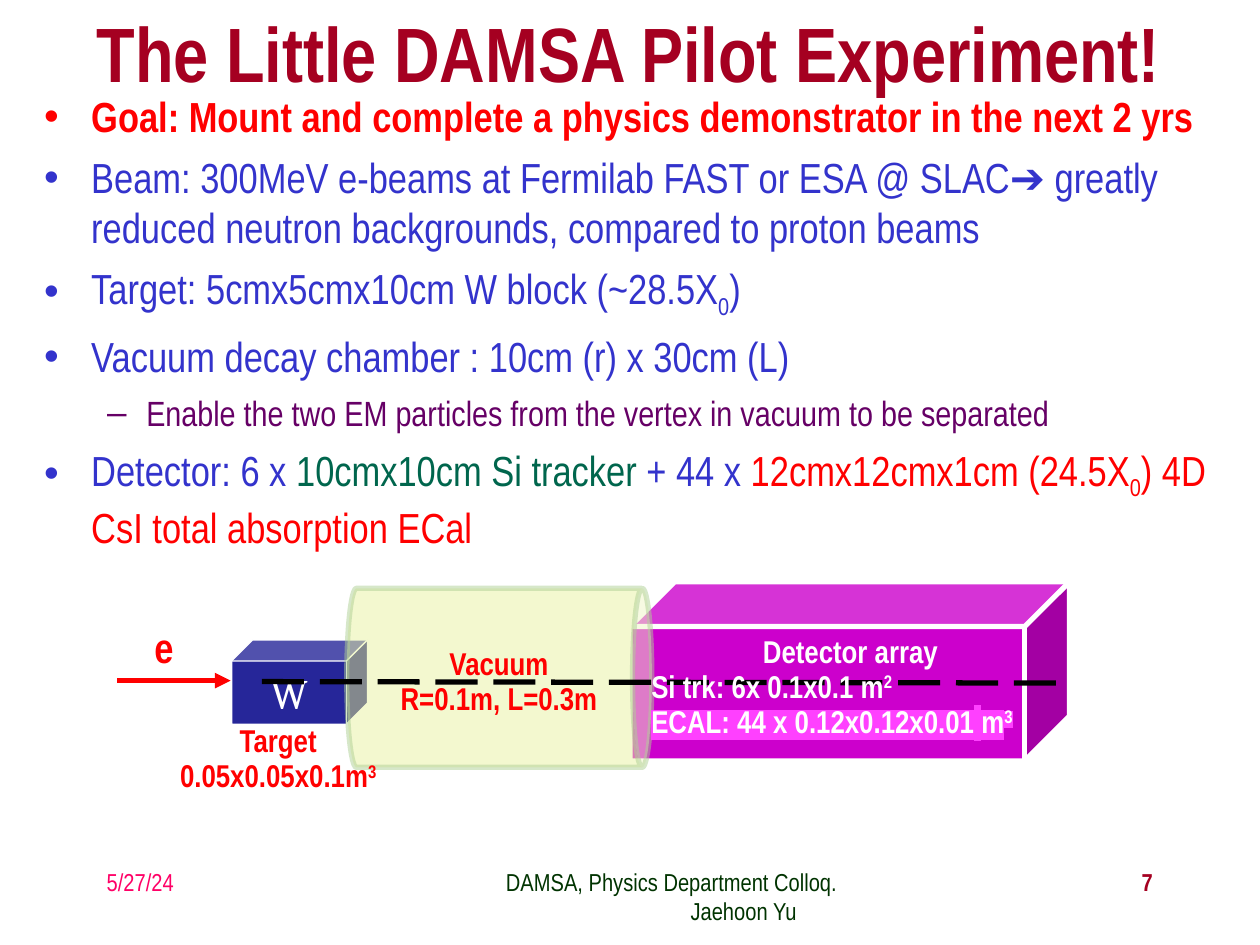
from lxml import etree
from pptx import Presentation
from pptx import util as u
from pptx.dml.color import RGBColor
from pptx.enum import dml, shapes, text
from pptx.oxml.ns import qn

C = {"red": "FF0000", "crimson": "A50021", "blue": "3333CC", "purple": "660066",
     "green": "00664D", "pink": "FF0066", "footer": "003300", "white": "FFFFFF",
     "black": "000000", "magenta": "CC00CC", "navy": "262699", "lime": "E8F2A1",
     "leaf": "AFD095", "highlight": "FF40FF"}
LEFT, CENTER, RIGHT = text.PP_ALIGN.LEFT, text.PP_ALIGN.CENTER, text.PP_ALIGN.RIGHT


def write(p, runs, align=LEFT, spacing=None, **fmt):
    """Fill a paragraph; a run is a string or (string, changed format)."""
    p.alignment = align
    if spacing:
        p.line_spacing = spacing
    for run in [runs] if isinstance(runs, str) else runs:
        words, extra = (run, {}) if isinstance(run, str) else run
        f = {"size": 18, "color": "red", "bold": False, "font": "Arial Narrow", **fmt, **extra}
        r = p.add_run()
        r.text = words
        r.font.size, r.font.bold = u.Pt(f["size"]), f["bold"]
        r.font.color.rgb = RGBColor.from_string(C[f["color"]])
        rPr = r.font._element
        if "base" in f:
            rPr.set("baseline", str(f["base"] * 1000))
        if "mark" in f:
            mark = etree.SubElement(rPr, qn("a:highlight"))
            etree.SubElement(mark, qn("a:srgbClr"), val=C[f["mark"]])
        r.font.name = f["font"]


def add_box(x, y, w, h, inset=True):
    tf = s.shapes.add_textbox(u.Cm(x), u.Cm(y), u.Cm(w), u.Cm(h)).text_frame
    tf.word_wrap = True
    if not inset:
        tf.margin_left = tf.margin_right = tf.margin_bottom = 0
        tf.margin_top = u.Cm(0.05)
    return tf


prs = Presentation()
prs.slide_width, prs.slide_height = u.Cm(25.4), u.Cm(19.05)
s = prs.slides.add_slide(prs.slide_layouts[6])

# Solids: detector, target and vacuum chamber
solids = {}
for name, kind, x, y, w, h, fill, line, width in [
        ("detector", shapes.MSO_SHAPE.CUBE, 12.7, 11.73, 8.86, 3.61, "magenta", "white", 3),
        ("target", shapes.MSO_SHAPE.CUBE, 4.67, 12.9, 2.74, 1.7, "navy", "white", 0.75),
        ("chamber", shapes.MSO_SHAPE.CAN, 8.26, 10.59, 3.61, 6.15, "lime", "leaf", 3)]:
    sp = s.shapes.add_shape(kind, u.Cm(x), u.Cm(y), u.Cm(w), u.Cm(h))
    sp.shadow.inherit = False
    sp.fill.solid()
    sp.fill.fore_color.rgb = RGBColor.from_string(C[fill])
    sp.line.color.rgb = RGBColor.from_string(C[line])
    sp.line.width = u.Pt(width)
    solids[name] = sp

tf = solids["target"].text_frame
tf.word_wrap = False
write(tf.paragraphs[0], "W", align=CENTER, size=24, color="white", font="Cambria")

can = solids["chamber"]
can.rotation = 90
can.adjustments[0] = 0.108
for clr in can._element.spPr.iter(qn("a:srgbClr")):
    etree.SubElement(clr, qn("a:alpha"), val="50000")

# Incoming beam and dashed beam axis
lines = []
for x1, y1, x2, y2, color in [(2.36, 13.72, 4.65, 13.72, "red"),
                              (5.28, 13.74, 21.59, 13.77, "black")]:
    cx = s.shapes.add_connector(shapes.MSO_CONNECTOR.STRAIGHT,
                                u.Cm(x1), u.Cm(y1), u.Cm(x2), u.Cm(y2))
    cx.line.color.rgb = RGBColor.from_string(C[color])
    cx.line.width = u.Pt(3)
    etree.SubElement(cx._element.spPr, qn("a:effectLst"))
    lines.append(cx)
beam, axis = lines
etree.SubElement(beam.line._get_or_add_ln(), qn("a:tailEnd"), type="triangle")
axis.line.dash_style = dml.MSO_LINE.LONG_DASH

# Title
tf = add_box(1.47, 0.2, 22.43, 1.7)
tf.vertical_anchor = text.MSO_ANCHOR.MIDDLE
write(tf.paragraphs[0], "The Little DAMSA Pilot Experiment!",
      align=CENTER, size=44, color="crimson", bold=True)

# Bullet list
sub = {"base": -25}
bullets = [
    (0, "red", [("Goal: Mount and complete a physics demonstrator in the next 2 yrs", {"bold": True})]),
    (0, "blue", "Beam: 300MeV e-beams at Fermilab FAST or ESA @ SLAC➔ greatly reduced "
                "neutron backgrounds, compared to proton beams"),
    (0, "blue", ["Target: 5cmx5cmx10cm W block (~28.5X", ("0", sub), ")"]),
    (0, "blue", "Vacuum decay chamber : 10cm (r) x 30cm (L)"),
    (1, "purple", "Enable the two EM particles from the vertex in vacuum to be separated"),
    (0, "blue", ["Detector: 6 x ", ("10cmx10cm Si tracker ", {"color": "green"}), "+ 44 x ",
                 ("12cmx12cmx1cm (24.5X", {"color": "red"}), ("0", {"color": "red", **sub}),
                 (") 4D CsI total absorption ECal", {"color": "red"})]),
]
levels = [("•", 0.95, -0.95, 24), ("–", 2.06, -0.79, 20)]
tf = add_box(0.64, 1.7, 24.33, 15.21)
for i, (level, color, runs) in enumerate(bullets):
    char, margin, indent, size = levels[level]
    p = tf.add_paragraph() if i else tf.paragraphs[0]
    p.level = level
    pPr = p._p.get_or_add_pPr()
    pPr.set("marL", str(u.Cm(margin)))
    pPr.set("indent", str(u.Cm(indent)))
    etree.SubElement(pPr, qn("a:buFont"), typeface="Arial")
    etree.SubElement(pPr, qn("a:buChar"), char=char)
    if i:
        p.space_before = u.Pt(6)
    write(p, runs, size=size, color=color)

# Labels on the drawing
sup = {"base": 30}
mark = {"mark": "highlight"}
labels = [
    (2.16, 12.57, 2.29, 0.61, "red", 24, [(CENTER, "e")]),
    (7.42, 13, 5.28, 1.52, "red", 18, [(CENTER, "Vacuum"), (CENTER, "R=0.1m, L=0.3m")]),
    (13.13, 12.75, 8.03, 2.59, "white", 18, [
        (CENTER, "Detector array"),
        (LEFT, ["Si trk: 6x 0.1x0.1 m", ("2", sup)]),
        (LEFT, [("ECAL: 44 x 0.12x0.12x0.01", mark), (" ", {"font": "Cambria", **mark}),
                ("m", mark), ("3", {**sup, **mark})])]),
    (2.97, 14.55, 5.28, 1.52, "red", 18, [
        (CENTER, "Target"), (CENTER, ["0.05x0.05x0.1m", ("3", sup)])]),
]
for x, y, w, h, color, size, rows in labels:
    tf = add_box(x, y, w, h, inset=False)
    for i, (align, runs) in enumerate(rows):
        p = tf.add_paragraph() if i else tf.paragraphs[0]
        write(p, runs, align=align, spacing=0.93, size=size, color=color, bold=True)

# Footer: date, venue with speaker, page number
tf = add_box(1.9, 17.35, 5.28, 1.27)
write(tf.paragraphs[0], "5/27/24", size=14, color="pink")
tf = add_box(9.73, 17.35, 7.62, 1.27)
write(tf.paragraphs[0], "DAMSA, Physics Department Colloq.", align=CENTER, size=14, color="footer")
p = tf.add_paragraph()
p._p.get_or_add_pPr().set("marL", str(u.Cm(2.9)))
write(p, "Jaehoon Yu", align=CENTER, size=14, color="footer")
tf = add_box(18.21, 17.35, 5.28, 1.27)
write(tf.paragraphs[0], "7", align=RIGHT, size=14, color="crimson", bold=True)

prs.save("out.pptx")
